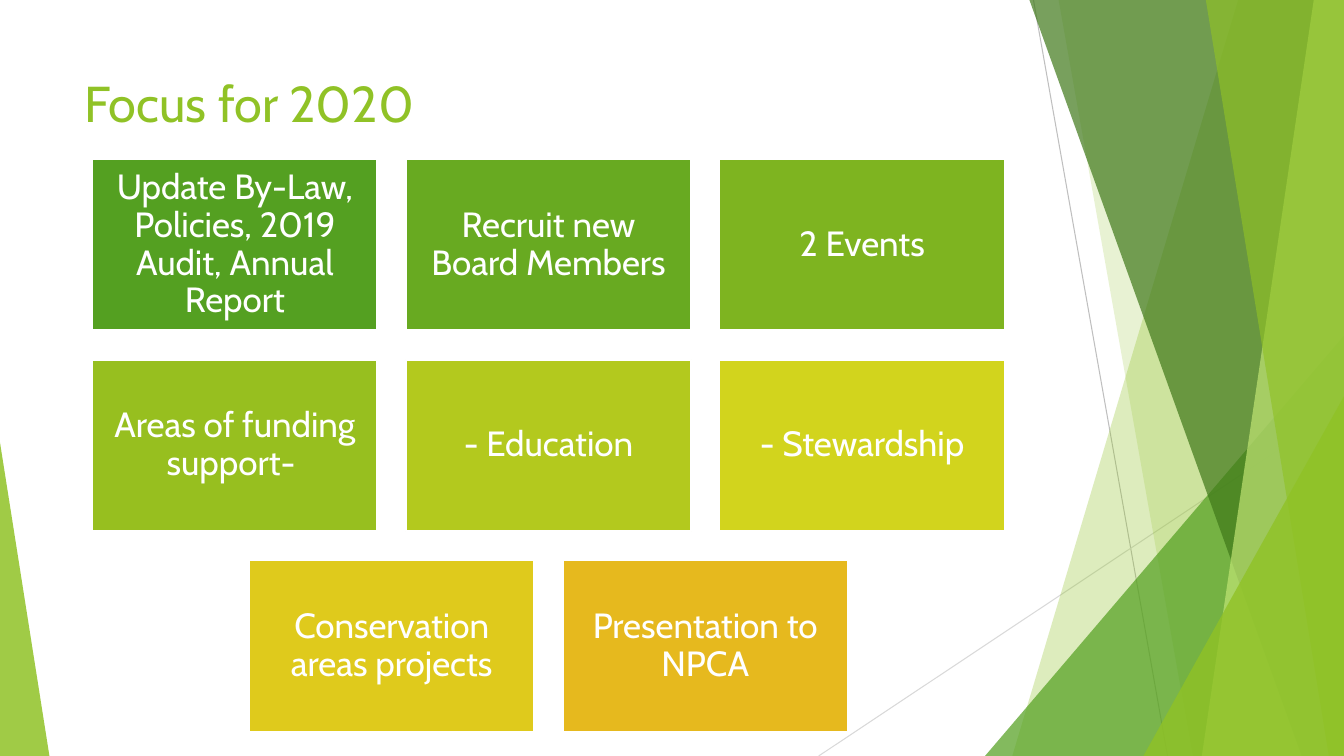
import dataclasses
import typing

import lxml.etree
import pptx
import pptx.dml.color
import pptx.enum.shapes
import pptx.enum.text
import pptx.oxml.ns
import pptx.util

Inches = pptx.util.Inches
ALIGN = pptx.enum.text.PP_ALIGN
ANCHOR = pptx.enum.text.MSO_ANCHOR
SHAPES = pptx.enum.shapes.MSO_SHAPE


@dataclasses.dataclass(frozen=True)
class Theme:
    font: str = "Cabin"
    title_size: int = 36
    card_size: int = 25
    green: str = "90C226"
    mid_green: str = "54A021"
    dark_green: str = "3F7819"
    pale_green: str = "C0E474"
    white: str = "FFFFFF"
    dark_rule: str = "BFBFBF"
    light_rule: str = "D9D9D9"


@dataclasses.dataclass(frozen=True)
class Rule:
    start: tuple[float, float]
    end: tuple[float, float]
    color: str


@dataclasses.dataclass(frozen=True)
class Facet:
    """A band from the top edge to the bottom edge, ending at the right side."""
    top_x: float
    bottom_x: float
    color: str
    opacity: int


@dataclasses.dataclass(frozen=True)
class Wedge:
    """A right triangle standing on the bottom edge."""
    left: float
    top: float
    width: float
    apex: float
    color: str
    opacity: int


@dataclasses.dataclass(frozen=True)
class Card:
    label: str
    color: str


THEME = Theme()
SLIDE_W, SLIDE_H = 13.33, 7.5

# Background decoration, from back to front
RULES = [
    Rule((10.25, 0), (11.58, SLIDE_H), THEME.dark_rule),
    Rule((SLIDE_W, 4.03), (8.12, SLIDE_H), THEME.light_rule),
]
BACKDROP: list[Facet | Wedge] = [
    Facet(12.28, 10.04, THEME.green, 30),
    Facet(10.5, 11.83, THEME.green, 20),
    Wedge(9.77, 3.33, 3.56, 1, THEME.mid_green, 72),
    Facet(10.21, 12.91, THEME.dark_green, 70),
    Facet(13.03, 11.92, THEME.pale_green, 70),
    Facet(11.96, 13.18, THEME.green, 65),
    Wedge(11.34, 3.93, 1.99, 1, THEME.green, 80),
    Wedge(0, 4.39, 0.49, 0, THEME.green, 85),
]

# Goals, row by row
GOAL_ROWS = [
    [Card("Update By-Law, Policies, 2019 Audit, Annual Report", "54A021"),
     Card("Recruit new Board Members", "68AA21"),
     Card("2 Events", "7EB420")],
    [Card("Areas of funding support- ", "97BF1F"),
     Card("- Education", "B3C91E"),
     Card("- Stewardship", "D2D41D")],
    [Card("Conservation areas projects", "DFCA1C"),
     Card("Presentation to NPCA", "E6B91E")],
]
CARD_W, CARD_H = 2.83, 1.7
PITCH_X, PITCH_Y = 3.11, 1.99
GRID_CENTER, GRID_TOP = 5.44, 1.58


def rgb(color: str) -> pptx.dml.color.RGBColor:
    return pptx.dml.color.RGBColor.from_string(color)


def apply_format(target: typing.Any, values: dict[str, typing.Any]) -> None:
    for attribute, value in values.items():
        setattr(target, attribute, value)


def fill_shape(shape: typing.Any, color: str, opacity: int = 100) -> None:
    shape.shadow.inherit = False
    shape.fill.solid()
    shape.fill.fore_color.rgb = rgb(color)
    if opacity < 100:
        tint = shape.element.spPr.find(".//" + pptx.oxml.ns.qn("a:srgbClr"))
        alpha = lxml.etree.SubElement(tint, pptx.oxml.ns.qn("a:alpha"))
        alpha.set("val", str(opacity * 1000))


def write_text(shape: typing.Any, text: str, size: int, color: str,
               frame_format: dict[str, typing.Any],
               paragraph_format: dict[str, typing.Any]) -> None:
    frame = shape.text_frame
    frame.text = text
    paragraph = frame.paragraphs[0]
    font = paragraph.runs[0].font
    apply_format(frame, {"word_wrap": True, **frame_format})
    apply_format(paragraph, paragraph_format)
    apply_format(font, {"name": THEME.font, "size": pptx.util.Pt(size)})
    font.color.rgb = rgb(color)


def draw_rule(slide: typing.Any, rule: Rule) -> None:
    connector = slide.shapes.add_connector(
        pptx.enum.shapes.MSO_CONNECTOR.STRAIGHT,
        *(Inches(value) for value in rule.start + rule.end))
    connector.line.width = pptx.util.Pt(0.75)
    connector.line.color.rgb = rgb(rule.color)
    lxml.etree.SubElement(connector.element.spPr, pptx.oxml.ns.qn("a:effectLst"))


def draw_backdrop(slide: typing.Any, part: Facet | Wedge) -> None:
    if isinstance(part, Facet):
        builder = slide.shapes.build_freeform(Inches(part.top_x), 0)
        corners = [(SLIDE_W, 0), (SLIDE_W, SLIDE_H), (part.bottom_x, SLIDE_H)]
        builder.add_line_segments([(Inches(x), Inches(y)) for x, y in corners])
        shape = builder.convert_to_shape()
    else:
        shape = slide.shapes.add_shape(
            SHAPES.ISOSCELES_TRIANGLE, Inches(part.left), Inches(part.top),
            Inches(part.width), Inches(SLIDE_H - part.top))
        shape.adjustments[0] = part.apex
    fill_shape(shape, part.color, part.opacity)
    shape.line.fill.background()


def draw_title(slide: typing.Any, text: str) -> None:
    title = slide.shapes.title
    slide.shapes.element.append(title.element)  # in front of the backdrop
    apply_format(title, {"left": Inches(0.74), "top": Inches(0.67),
                         "width": Inches(9.4), "height": Inches(1.44)})
    write_text(title, text, THEME.title_size, THEME.green,
               {"vertical_anchor": ANCHOR.TOP,
                "auto_size": pptx.enum.text.MSO_AUTO_SIZE.NONE},
               {"alignment": ALIGN.LEFT})


def draw_card(slide: typing.Any, card: Card, left: float, top: float) -> None:
    tile = slide.shapes.add_shape(SHAPES.RECTANGLE, Inches(left), Inches(top),
                                  Inches(CARD_W), Inches(CARD_H))
    fill_shape(tile, card.color)
    tile.line.color.rgb = rgb(THEME.white)
    tile.line.width = pptx.util.Pt(1.5)
    margins = {f"margin_{side}": Inches(0.1)
               for side in ("left", "top", "right", "bottom")}
    write_text(tile, card.label, THEME.card_size, THEME.white,
               {"vertical_anchor": ANCHOR.MIDDLE, **margins},
               {"alignment": ALIGN.CENTER, "line_spacing": 0.9})


def main() -> None:
    deck = pptx.Presentation()
    deck.slide_width, deck.slide_height = Inches(SLIDE_W), Inches(SLIDE_H)
    slide = deck.slides.add_slide(deck.slide_layouts.get_by_name("Title Only"))

    for rule in RULES:
        draw_rule(slide, rule)
    for part in BACKDROP:
        draw_backdrop(slide, part)
    draw_title(slide, "Focus for 2020")

    # Each row is centred on the grid
    for row, goals in enumerate(GOAL_ROWS):
        row_left = GRID_CENTER - (CARD_W + PITCH_X * (len(goals) - 1)) / 2
        for column, goal in enumerate(goals):
            draw_card(slide, goal, row_left + column * PITCH_X,
                      GRID_TOP + row * PITCH_Y)

    deck.save("out.pptx")


if __name__ == "__main__":
    main()
